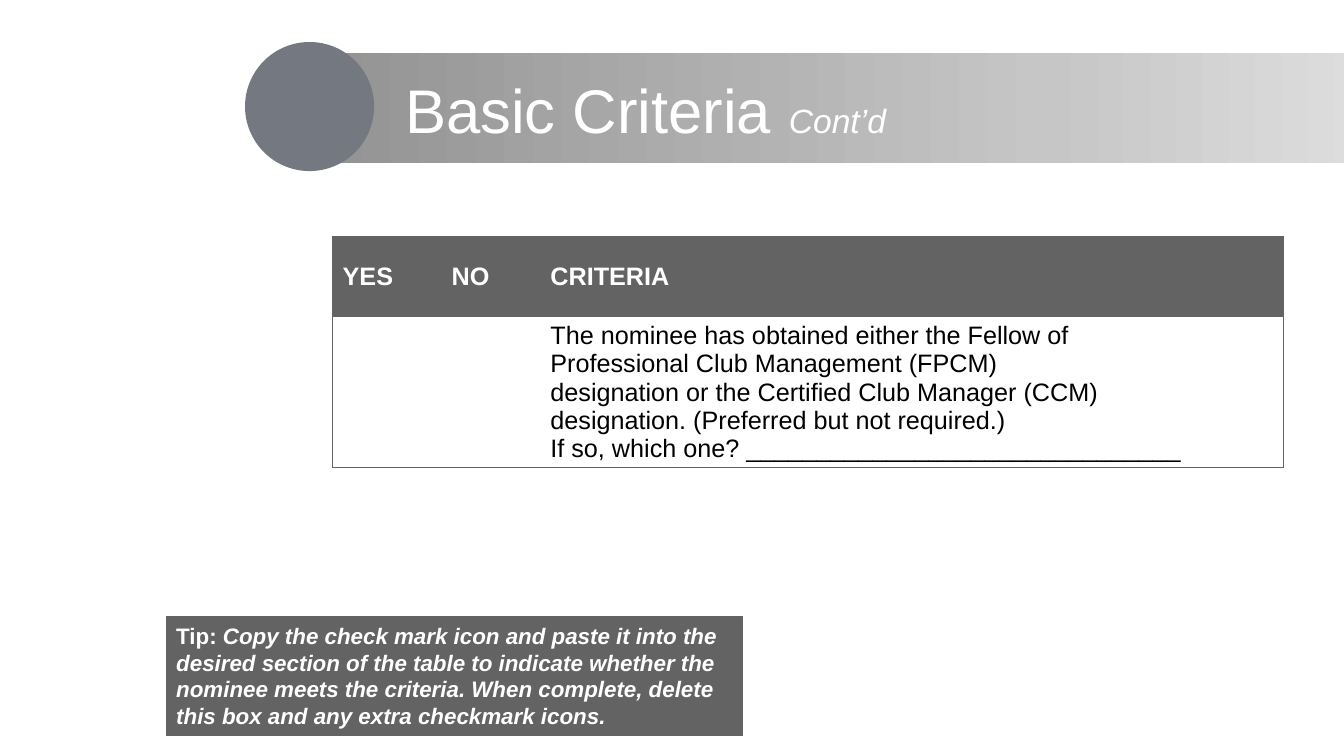
import copy
import pptx
import pptx.util
import pptx.dml.color
import pptx.enum.shapes
import pptx.enum.text
import pptx.oxml
import pptx.oxml.ns

Pt = pptx.util.Pt
KIND = pptx.enum.shapes.MSO_SHAPE
MIDDLE = pptx.enum.text.MSO_ANCHOR.MIDDLE
LEFT = pptx.enum.text.PP_ALIGN.LEFT
qn = pptx.oxml.ns.qn

FONT = "Arial"
GREY, WHITE, BLACK, SLATE = "646363", "FFFFFF", "000000", "747880"
FADE = [(0, "949494"), (0.54, "C6C6C6"), (1, "F4F4F4")]

TITLE = [("Basic Criteria ", 44, False), ("Cont’d", 24, True)]
HEADS = ["YES", "NO", "CRITERIA"]
CRITERIA = [
    "The nominee has obtained either the Fellow of",
    "Professional Club Management (FPCM)",
    "designation or the Certified Club Manager (CCM)",
    "designation. (Preferred but not required.)",
    "If so, which one? _______________________________",
]
ROWS = [[[head] for head in HEADS], [[], [], CRITERIA]]
TIP = [
    ("Tip: ", False),
    ("Copy the check mark icon and paste it into the desired section of "
     "the table to indicate whether the nominee meets the criteria. When "
     "complete, delete this box and any extra checkmark icons.", True),
]

BAND = (238.3, 37.6, 940.3, 79)
DISC = (175, 30, 92.2, 92.2)
HEADING = (282.2, 28.8, 612, 104.4)
TABLE = (237.6, 169.2)
WIDTHS = [77.8, 70.6, 530.6]
HEIGHTS = [57, 107]
NOTE = (118.8, 440.6, 411.8, 85)


def color(text):
    return pptx.dml.color.RGBColor.from_string(text)


def points(box):
    return [Pt(length) for length in box]


def add_run(para, text, size, tint, bold=False, italic=False):
    run = para.add_run()
    run.text = text
    font = run.font
    font.name, font.size = FONT, Pt(size)
    font.bold, font.italic = bold, italic
    font.color.rgb = color(tint)


def add_block(slide, kind, box, tint=None):
    shape = slide.shapes.add_shape(kind, *points(box))
    shape.shadow.inherit = False
    shape.line.fill.background()
    if tint:
        shape.fill.solid()
        shape.fill.fore_color.rgb = color(tint)
    return shape


def add_band(slide):
    band = add_block(slide, KIND.RECTANGLE, BAND)
    band.fill.gradient()
    band.fill.gradient_angle = 0
    stops = next(band._element.iter(qn("a:gsLst")))
    stops.insert(1, copy.deepcopy(stops[0]))
    for stop, (place, tint) in zip(band.fill.gradient_stops, FADE):
        stop.position = place
        stop.color.rgb = color(tint)


def add_title(slide):
    title = slide.shapes.title
    title.left, title.top, title.width, title.height = points(HEADING)
    frame = title.text_frame
    frame.vertical_anchor = MIDDLE
    frame.word_wrap = True
    para = frame.paragraphs[0]
    para.alignment, para.line_spacing = LEFT, 0.9
    for text, size, italic in TITLE:
        add_run(para, text, size, WHITE, italic=italic)
    # Bring the title in front of the band
    title._element.getparent().append(title._element)


def set_edges(cell, sides):
    """Draw the named sides (L, R, T, B) of a cell and clear the others."""
    props = cell._tc.get_or_add_tcPr()
    for side in "LRTB":
        edge = pptx.oxml.parse_xml(
            f'<a:ln{side} {pptx.oxml.ns.nsdecls("a")} w="{Pt(1)}"/>')
        if side in sides:
            fill = edge.makeelement(qn("a:solidFill"), {})
            fill.append(edge.makeelement(qn("a:srgbClr"), {"val": GREY}))
        else:
            fill = edge.makeelement(qn("a:noFill"), {})
        edge.append(fill)
        props.append(edge)


def add_table(slide):
    frame = slide.shapes.add_table(
        len(ROWS), len(WIDTHS), *points(TABLE),
        Pt(sum(WIDTHS)), Pt(sum(HEIGHTS)))
    table = frame.table
    table.horz_banding = False
    for col, width in zip(table.columns, WIDTHS):
        col.width = Pt(width)
    for row, height in zip(table.rows, HEIGHTS):
        row.height = Pt(height)
    last = len(WIDTHS) - 1
    for i, row in enumerate(ROWS):
        head = i == 0
        for j, lines in enumerate(row):
            cell = table.cell(i, j)
            sides = "T" + ("" if head else "B")
            sides += {0: "L", last: "R"}.get(j, "")
            set_edges(cell, sides)
            if head:
                cell.fill.solid()
                cell.fill.fore_color.rgb = color(GREY)
            else:
                cell.fill.background()
            cell.vertical_anchor = MIDDLE
            frame = cell.text_frame
            for k, line in enumerate(lines):
                para = frame.add_paragraph() if k else frame.paragraphs[0]
                add_run(para, line, 18, WHITE if head else BLACK, bold=head)


def add_tip(slide):
    note = add_block(slide, KIND.RECTANGLE, NOTE, GREY)
    note.line.color.rgb = color(GREY)
    note.line.width = Pt(0.75)
    frame = note.text_frame
    frame.word_wrap = True
    frame.auto_size = pptx.enum.text.MSO_AUTO_SIZE.SHAPE_TO_FIT_TEXT
    frame.vertical_anchor = pptx.enum.text.MSO_ANCHOR.TOP
    para = frame.paragraphs[0]
    para.alignment = LEFT
    for text, italic in TIP:
        add_run(para, text, 16, WHITE, bold=True, italic=italic)


def main():
    deck = pptx.Presentation()
    deck.slide_width, deck.slide_height = Pt(960), Pt(540)
    slide = deck.slides.add_slide(deck.slide_layouts[5])
    add_band(slide)
    add_block(slide, KIND.OVAL, DISC, SLATE)
    add_title(slide)
    add_table(slide)
    add_tip(slide)
    deck.save("out.pptx")


if __name__ == "__main__":
    main()
